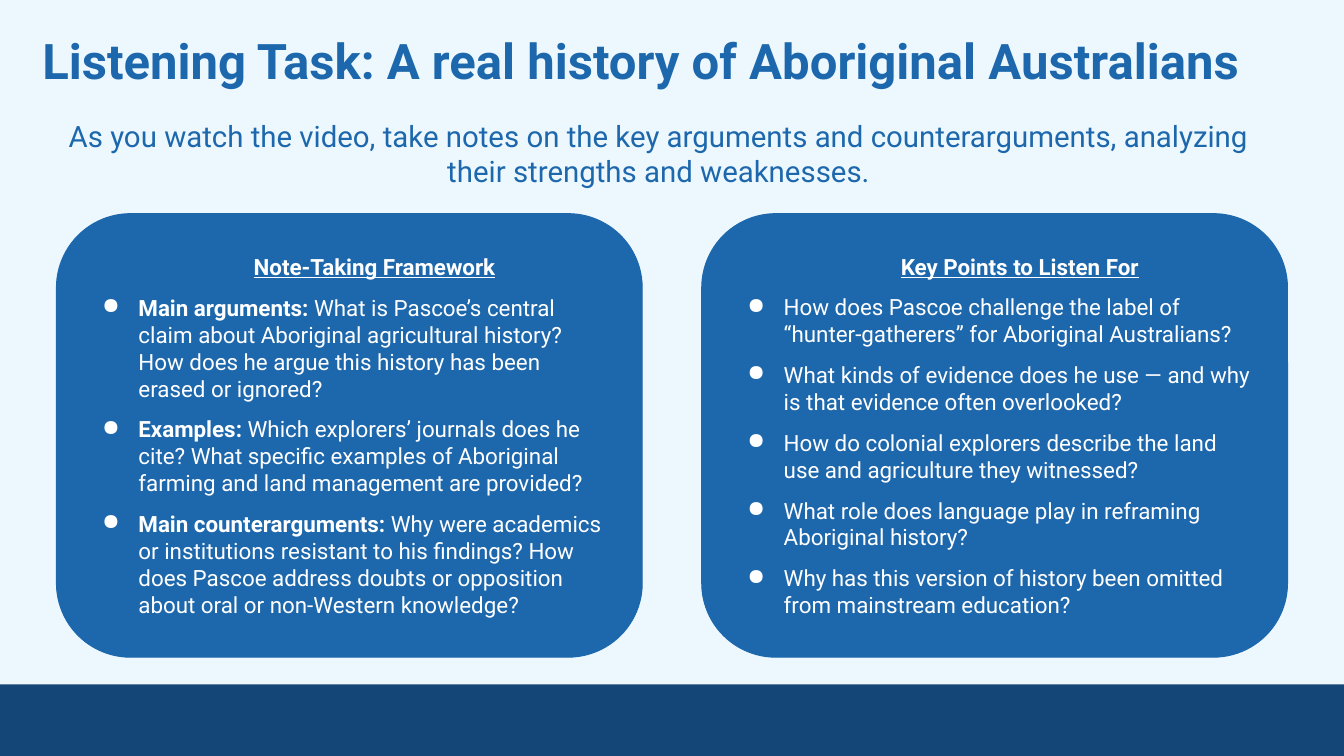
"""Build the listening task slide with two note cards."""
import pptx
import pptx.dml.color
import pptx.enum.shapes
import pptx.enum.text
import pptx.oxml
import pptx.oxml.ns
import pptx.util

ALIGN = pptx.enum.text.PP_ALIGN
ANCHOR = pptx.enum.text.MSO_ANCHOR
SHAPE = pptx.enum.shapes.MSO_SHAPE


class Theme:
    """Colours, type sizes and font of the slide."""
    paper, blue, navy, white = "ECF8FE", "1D67AC", "144777", "FFFFFF"
    title, lead, body = 35, 21, 16
    font = "Roboto"


def px(size):
    """Turn px, at 100 to the inch, into EMU."""
    return pptx.util.Emu(size * 9144)


def rgb(code):
    """Make a colour from its hex code."""
    return pptx.dml.color.RGBColor.from_string(code)


def write(par, text, size, color, bold=False, under=False):
    """Add a formatted run of text to a paragraph."""
    run = par.add_run()
    run.text = text
    font = run.font
    font.name, font.size = Theme.font, pptx.util.Pt(size)
    font.bold, font.underline = bold, under
    font.color.rgb = rgb(color)


class Deck:
    """Hold the theme and the current slide."""

    def __init__(self, theme):
        """Open a blank wide slide with a title."""
        self.theme = theme
        self.show = pptx.Presentation()
        self.show.slide_width, self.show.slide_height = px(1333), px(750)
        self.slide = self.show.slides.add_slide(self.show.slide_layouts[5])
        fill = self.slide.background.fill
        fill.solid()
        fill.fore_color.rgb = rgb(theme.paper)

    def frame(self, shape, inset, anchor):
        """Set the insets and anchor of a shape's text."""
        frame = shape.text_frame
        frame.word_wrap = True
        frame.vertical_anchor = anchor
        frame.margin_left = frame.margin_right = px(inset)
        frame.margin_top = frame.margin_bottom = px(inset)
        return frame

    def title(self, text, x, y, w, h):
        """Place and fill the title."""
        shape = self.slide.shapes.title
        shape.left, shape.top, shape.width, shape.height = map(px, (x, y, w, h))
        par = self.frame(shape, 13, ANCHOR.BOTTOM).paragraphs[0]
        par.alignment = ALIGN.LEFT
        write(par, text, self.theme.title, self.theme.blue, bold=True)

    def lead(self, text, x, y, w, h):
        """Add the centred line under the title."""
        shape = self.slide.shapes.add_textbox(*map(px, (x, y, w, h)))
        par = self.frame(shape, 10, ANCHOR.TOP).paragraphs[0]
        par.alignment = ALIGN.CENTER
        write(par, text, self.theme.lead, self.theme.blue)

    def block(self, kind, color, x, y, w, h):
        """Add a filled shape."""
        shape = self.slide.shapes.add_shape(kind, *map(px, (x, y, w, h)))
        shape.shadow.inherit = False
        shape.fill.solid()
        shape.fill.fore_color.rgb = rgb(color)
        shape.line.color.rgb = rgb(color)
        shape.line.width = pptx.util.Pt(0.75)
        return shape

    def bullet(self, par):
        """Give a paragraph a hanging round bullet."""
        props = par._p.get_or_add_pPr()
        props.set("indent", str(px(-36)))
        space = pptx.oxml.ns.nsdecls("a")
        for part in (
            f'<a:buClr {space}><a:srgbClr val="{self.theme.white}"/></a:buClr>',
            f'<a:buChar {space} char="●"/>',
        ):
            props.append(pptx.oxml.parse_xml(part))

    def card(self, head, items, x, y, w, h):
        """Add a rounded card with a heading and bullets."""
        look = {"size": self.theme.body, "color": self.theme.white}
        shape = self.block(SHAPE.ROUNDED_RECTANGLE, self.theme.blue, x, y, w, h)
        shape.adjustments[0] = 0.167
        frame = self.frame(shape, 10, ANCHOR.MIDDLE)
        par = frame.paragraphs[0]
        par.alignment = ALIGN.CENTER
        par._p.get_or_add_pPr().set("marL", str(px(50)))
        write(par, head, bold=True, under=True, **look)
        for label, text in items:
            par = frame.add_paragraph()
            par.alignment = ALIGN.LEFT
            par._p.get_or_add_pPr().set("marL", str(px(50)))
            self.bullet(par)
            par.space_before = pptx.util.Pt(10)
            if label:
                write(par, label, bold=True, **look)
            write(par, text, **look)
        par.space_after = pptx.util.Pt(10)


NOTES = [
    ("Main arguments: ", "What is Pascoe’s central claim about Aboriginal agricultural "
     "history? How does he argue this history has been erased or ignored?"),
    ("Examples: ", "Which explorers’ journals does he cite? What specific examples of "
     "Aboriginal farming and land management are provided?"),
    ("Main counterarguments: ", "Why were academics or institutions resistant to his "
     "findings? How does Pascoe address doubts or opposition about oral or "
     "non-Western knowledge?"),
]
POINTS = [
    ("", "How does Pascoe challenge the label of “hunter-gatherers” for Aboriginal Australians?"),
    ("", "What kinds of evidence does he use — and why is that evidence often overlooked?"),
    ("", "How do colonial explorers describe the land use and agriculture they witnessed?"),
    ("", "What role does language play in reframing Aboriginal history?"),
    ("", "Why has this version of history been omitted from mainstream education?"),
]


def main():
    """Build and save the slide."""
    deck = Deck(Theme)
    foot = deck.block(SHAPE.RECTANGLE, Theme.navy, -2, 679, 1337, 71)
    foot.line.fill.background()
    deck.title("Listening Task: A real history of Aboriginal Australians", 29, 16, 1219, 86)
    deck.lead("As you watch the video, take notes on the key arguments and counterarguments, "
              "analyzing their strengths and weaknesses.", 29, 107, 1248, 91)
    cards = [("Note-Taking Framework", NOTES), ("Key Points to Listen For", POINTS)]
    for col, (head, items) in enumerate(cards):
        deck.card(head, items, 56 + 640 * col, 212, 581, 440)
    deck.show.save("out.pptx")


if __name__ == "__main__":
    main()
